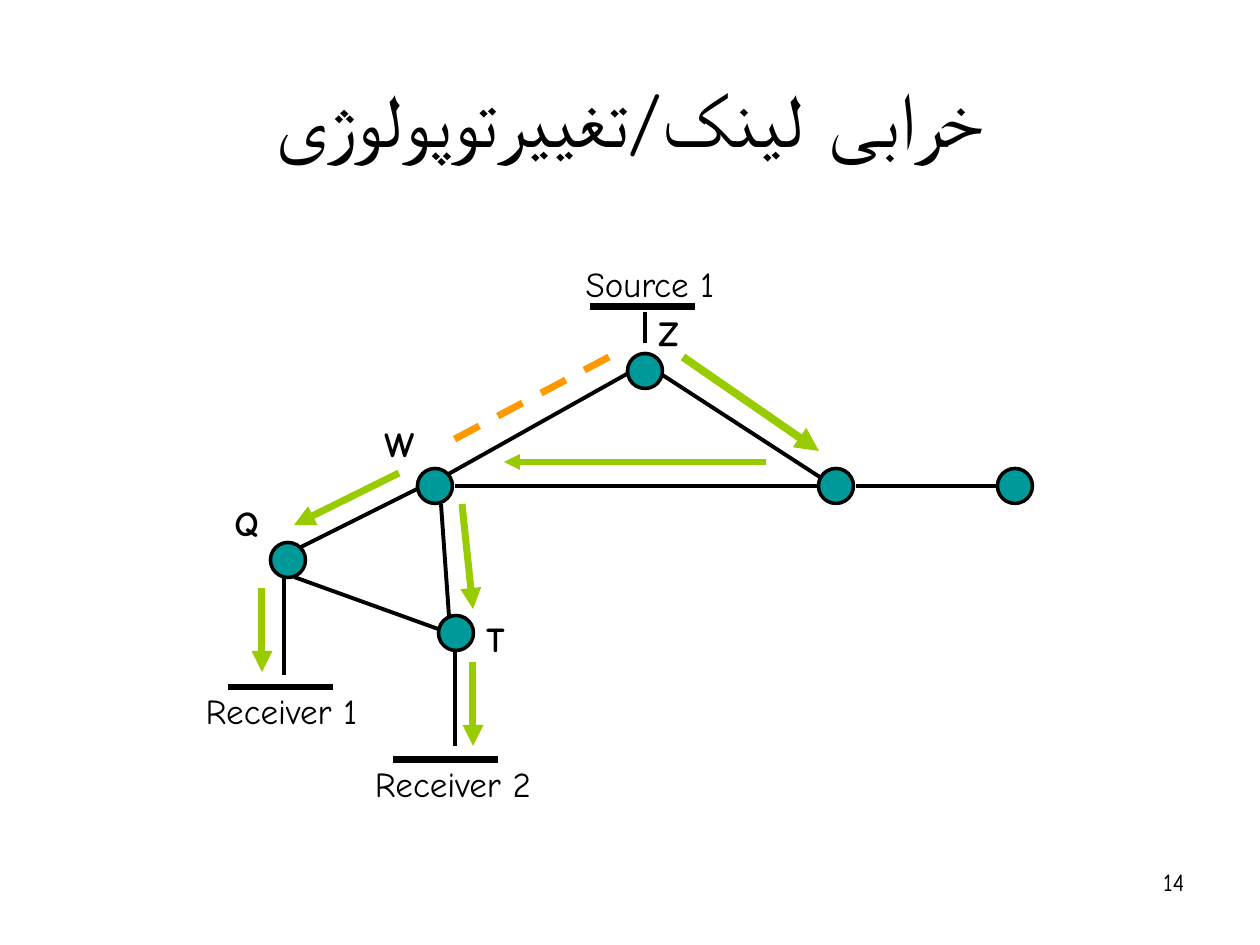
import dataclasses

import pptx
import pptx.dml.color
import pptx.enum.dml
import pptx.enum.shapes
import pptx.enum.text
import pptx.oxml
import pptx.oxml.ns
import pptx.util

ALIGN = pptx.enum.text.PP_ALIGN
ANCHOR = pptx.enum.text.MSO_ANCHOR


@dataclasses.dataclass(frozen=True)
class Theme:
    """Colours, font, type sizes and line widths of the slide."""
    font: str = "Comic Neue"
    ink: str = "000000"
    node: str = "009999"
    flow: str = "99CC00"
    broken: str = "FF9900"
    title: int = 44
    label: int = 20
    number: int = 14
    outline: float = 2
    link: float = 2.25
    heavy: float = 4


THEME = Theme()
SLIDE_WIDTH, SLIDE_HEIGHT = 1260, 945
SCALE = pptx.util.Inches(10) / SLIDE_WIDTH
NODE_SIZE, BAR_WIDTH, LABEL_HEIGHT = 35, 105, 54

NODES = [(255, 236), (835, 236), (465, 121), (108, 310), (276, 383), (656, 236)]
LINKS = [
    ((454, 120), (265, 226)),
    ((243, 236), (117, 299)),
    ((481, 124), (649, 233)),
    ((676, 236), (819, 236)),
    ((275, 236), (639, 236)),
    ((114, 327), (261, 380)),
    ((261, 254), (269, 366)),
    ((275, 401), (275, 496)),
    ((104, 327), (104, 425)),
]
SOURCE_LINK = ((465, 62), (465, 93))
BROKEN_LINK = ((429, 107), (271, 191))
FLOWS = [
    ((219, 223), (114, 275), THEME.heavy),
    ((282, 254), (293, 359), THEME.heavy),
    ((293, 412), (293, 496), THEME.heavy),
    ((82, 338), (82, 422), THEME.heavy),
    ((503, 107), (639, 201), 4.5),
    ((586, 212), (324, 212), 3),
]
HOSTS = [
    ("Source 1", (410, 57), (387, 6, 166)),
    ("Receiver 1", (48, 437), (5, 433, 193)),
    ("Receiver 2", (213, 510), (174, 506, 198)),
]
NODE_LABELS = [
    ("Z", (466, 55, 49)),
    ("W", (192, 166, 62)),
    ("Q", (42, 245, 55)),
    ("T", (294, 361, 49)),
]


def px(length):
    """Turn pixels into EMU."""
    return pptx.util.Emu(round(length * SCALE))


def color(value):
    """Turn a hex string into a colour."""
    return pptx.dml.color.RGBColor.from_string(value)


def write_text(shape, text, size, align=ALIGN.LEFT, anchor=ANCHOR.TOP,
               bold=False, wrap=True, right_to_left=False):
    """Write one formatted paragraph into a shape."""
    frame = shape.text_frame
    frame.word_wrap = wrap
    frame.vertical_anchor = anchor
    paragraph = frame.paragraphs[0]
    paragraph.alignment = align
    run = paragraph.add_run()
    run.text = text
    run.font.name = THEME.font
    run.font.size = pptx.util.Pt(size)
    run.font.bold = bold
    run.font.color.rgb = color(THEME.ink)
    if right_to_left:
        paragraph._p.get_or_add_pPr().set("rtl", "1")
        script_font = pptx.oxml.parse_xml(
            f'<a:cs {pptx.oxml.ns.nsdecls("a")} typeface="{THEME.font}"/>')
        run.font._element.append(script_font)


def add_label(slide, text, left, top, width, **text_format):
    """Add a one-line label that grows with its text."""
    box = slide.shapes.add_textbox(px(left), px(top), px(width), px(LABEL_HEIGHT))
    box.text_frame.auto_size = pptx.enum.text.MSO_AUTO_SIZE.SHAPE_TO_FIT_TEXT
    write_text(box, text, THEME.label, wrap=False, **text_format)


def add_line(slide, origin, start, end, width=THEME.link, line_color=THEME.ink,
             arrow=False, dashed=False):
    """Add a straight line between two points measured from the origin."""
    left, top = origin
    connector = slide.shapes.add_connector(
        pptx.enum.shapes.MSO_CONNECTOR.STRAIGHT,
        px(left + start[0]), px(top + start[1]),
        px(left + end[0]), px(top + end[1]))
    connector.line.width = pptx.util.Pt(width)
    connector.line.color.rgb = color(line_color)
    if dashed:
        connector.line.dash_style = pptx.enum.dml.MSO_LINE.DASH
    namespace = pptx.oxml.ns.nsdecls("a")
    if arrow:
        connector.line._get_or_add_ln().append(
            pptx.oxml.parse_xml(f'<a:tailEnd {namespace} type="triangle"/>'))
    connector._element.spPr.append(pptx.oxml.parse_xml(f"<a:effectLst {namespace}/>"))


def add_node(slide, center_x, center_y):
    """Add a router circle around its centre."""
    radius = NODE_SIZE / 2
    node = slide.shapes.add_shape(
        pptx.enum.shapes.MSO_SHAPE.OVAL, px(center_x - radius),
        px(center_y - radius), px(NODE_SIZE), px(NODE_SIZE))
    node.shadow.inherit = False
    node.fill.solid()
    node.fill.fore_color.rgb = color(THEME.node)
    node.line.color.rgb = color(THEME.ink)
    node.line.width = pptx.util.Pt(THEME.outline)


def add_title(slide, left, top, width, height):
    """Place the title placeholder and fill it."""
    title = slide.shapes.title
    title.left, title.top = px(left), px(top)
    title.width, title.height = px(width), px(height)
    write_text(title, "خرابی لینک/تغییرتوپولوژی", THEME.title, align=ALIGN.CENTER,
               anchor=ANCHOR.MIDDLE, right_to_left=True)


def add_network(slide, left, top):
    """Draw the network with its hosts, links, routers and flows."""
    origin = left, top
    for text, (bar_x, bar_y), (label_x, label_y, width) in HOSTS:
        add_line(slide, origin, (bar_x, bar_y), (bar_x + BAR_WIDTH, bar_y), THEME.heavy)
        add_label(slide, text, left + label_x, top + label_y, width, align=ALIGN.CENTER)
    for start, end in LINKS:
        add_line(slide, origin, start, end)
    add_line(slide, origin, *SOURCE_LINK, width=THEME.outline)
    for center_x, center_y in NODES:
        add_node(slide, left + center_x, top + center_y)
    for text, (label_x, label_y, width) in NODE_LABELS:
        add_label(slide, text, left + label_x, top + label_y, width, bold=True)
    add_line(slide, origin, *BROKEN_LINK, width=THEME.heavy,
             line_color=THEME.broken, dashed=True)
    for start, end, width in FLOWS:
        add_line(slide, origin, start, end, width, THEME.flow, arrow=True)


def add_page_number(slide, left, top, width, height):
    """Write the page number at the right of its box."""
    box = slide.shapes.add_textbox(px(left), px(top), px(width), px(height))
    write_text(box, "14", THEME.number, align=ALIGN.RIGHT)


def main():
    """Build and save the slide."""
    presentation = pptx.Presentation()
    presentation.slide_width = px(SLIDE_WIDTH)
    presentation.slide_height = px(SLIDE_HEIGHT)
    slide = presentation.slides.add_slide(presentation.slide_layouts[5])
    add_title(slide, 63, 38, 1134, 158)
    add_network(slide, 180, 250)
    add_page_number(slide, 903, 861, 294, 66)
    presentation.save("out.pptx")


if __name__ == "__main__":
    main()
